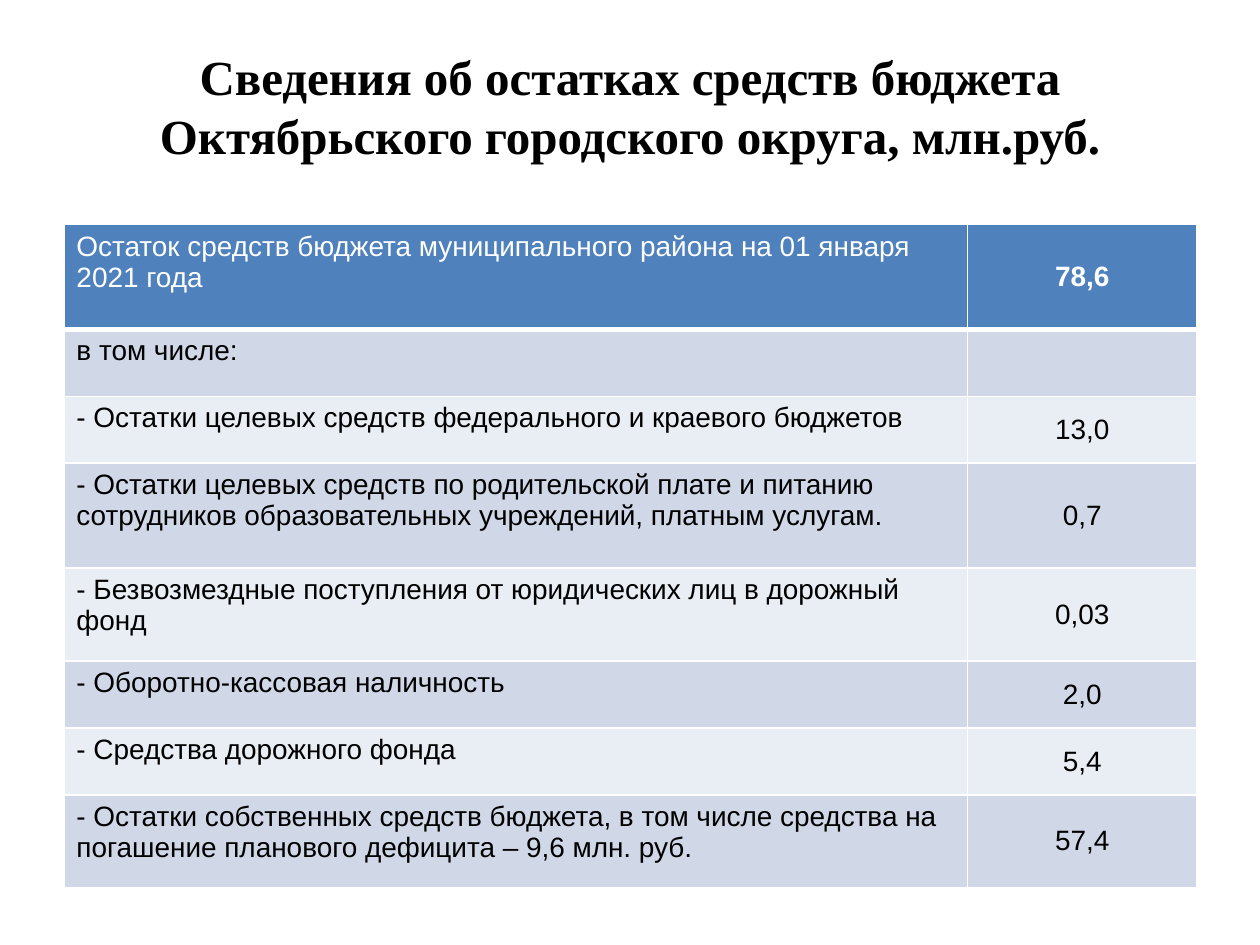
from lxml.etree import SubElement
from pptx import Presentation
from pptx.dml.color import RGBColor as Rgb
from pptx.enum.text import MSO_ANCHOR as Anchor, PP_ALIGN as Align
from pptx.oxml.ns import qn
from pptx.util import Pt

COLORS = {
    "text": "000000",
    "white": "FFFFFF",
    "header": "4F81BD",
    "band_dark": "D0D8E8",
    "band_light": "E9EDF4",
}
TALL, MEDIUM, LOW = 60, 53.2, 38.2

# Description, amount, row height
BALANCES = [
    ("Остаток средств бюджета муниципального района на 01 января 2021 года", "78,6", TALL),
    ("в том числе:", "", LOW),
    ("- Остатки целевых средств федерального и краевого бюджетов", "13,0", LOW),
    ("- Остатки целевых средств по родительской плате и питанию сотрудников "
     "образовательных учреждений, платным услугам.", "0,7", TALL),
    ("- Безвозмездные поступления от юридических лиц в дорожный фонд", "0,03", MEDIUM),
    ("- Оборотно-кассовая наличность", "2,0", LOW),
    ("- Средства дорожного фонда", "5,4", LOW),
    ("- Остатки собственных средств бюджета, в том числе средства на погашение "
     "планового дефицита – 9,6 млн. руб.", "57,4", MEDIUM),
]


class SlideBuilder:
    title_font, body_font = "Times New Roman", "Arial"
    title_size, body_size = 28, 16

    def __init__(self, slide):
        self.slide = slide

    def style(self, frame, font, size, color, bold, align):
        for paragraph in frame.paragraphs:
            paragraph.alignment = align
            for run in paragraph.runs:
                run.font.name = font
                run.font.size = Pt(size)
                run.font.bold = bold
                run.font.color.rgb = Rgb.from_string(COLORS[color])

    def title(self, text, left, top, width, height):
        box = self.slide.shapes.add_textbox(Pt(left), Pt(top), Pt(width), Pt(height))
        frame = box.text_frame
        frame.word_wrap = True
        frame.vertical_anchor = Anchor.MIDDLE
        frame.text = text
        self.style(frame, self.title_font, self.title_size, "text", True, Align.CENTER)

    def borders(self, cell, widths):
        properties = cell._tc.get_or_add_tcPr()
        for side, width in zip("LRTB", widths):
            line = SubElement(properties, qn(f"a:ln{side}"), w=str(Pt(width)))
            fill = SubElement(line, qn("a:solidFill"))
            SubElement(fill, qn("a:srgbClr"), val=COLORS["white"])

    def cell(self, cell, text, row, is_amount):
        is_header = row == 0
        # The rule under the header is thicker than the rest
        self.borders(cell, (1, 1, 3 if row == 1 else 1, 3 if is_header else 1))
        band = "header" if is_header else "band_dark" if row % 2 else "band_light"
        cell.fill.solid()
        cell.fill.fore_color.rgb = Rgb.from_string(COLORS[band])
        cell.vertical_anchor = Anchor.MIDDLE if is_amount else Anchor.TOP
        cell.text_frame.text = text
        self.style(cell.text_frame, self.body_font, self.body_size,
                   "white" if is_header else "text", is_header and is_amount,
                   Align.CENTER if is_amount else Align.LEFT)

    def table(self, rows, left, top, widths):
        height = sum(row_height for *_, row_height in rows)
        table = self.slide.shapes.add_table(
            len(rows), len(widths), Pt(left), Pt(top), Pt(sum(widths)), Pt(height)).table
        for column, width in zip(table.columns, widths):
            column.width = Pt(width)
        for row, (*texts, row_height) in enumerate(rows):
            table.rows[row].height = Pt(row_height)
            for column, text in enumerate(texts):
                self.cell(table.cell(row, column), text, row, column == 1)


def main():
    deck = Presentation()
    deck.slide_width, deck.slide_height = Pt(720), Pt(540)
    builder = SlideBuilder(deck.slides.add_slide(deck.slide_layouts[6]))

    # Heading
    builder.title("Сведения об остатках средств бюджета Октябрьского городского "
                  "округа, млн.руб.", 36, 15, 648, 90)

    # Budget balances
    builder.table(BALANCES, 36.5, 128.3, (516.5, 131))

    deck.save("out.pptx")


if __name__ == "__main__":
    main()
